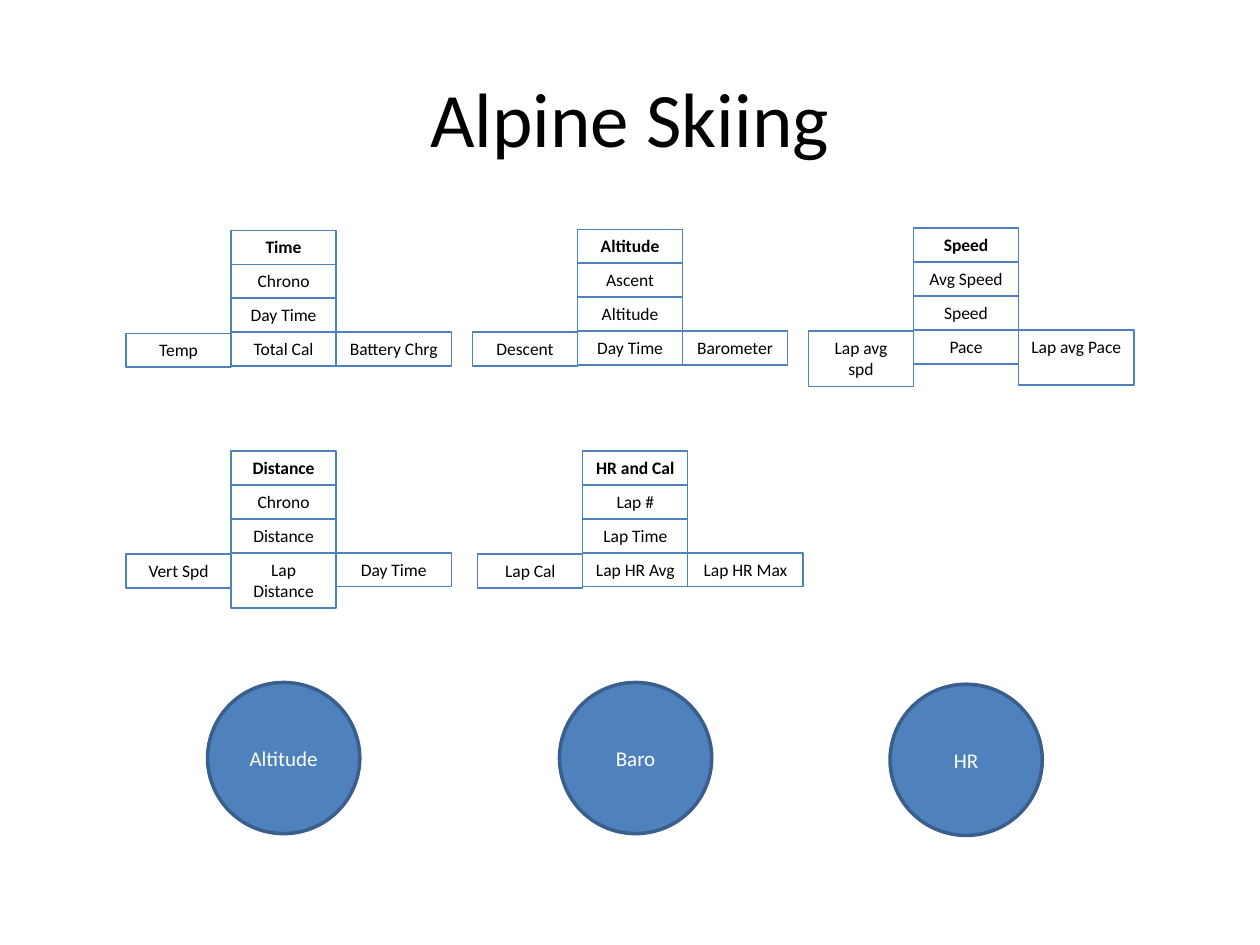
from dataclasses import dataclass

from pptx import Presentation
from pptx.dml.color import RGBColor
from pptx.enum.shapes import MSO_SHAPE as Shape
from pptx.enum.text import MSO_ANCHOR as Anchor, MSO_AUTO_SIZE as AutoSize, PP_ALIGN as Align
from pptx.util import Pt

TITLE = "Alpine Skiing"

# (left, top), centre column, left cell, right cell, right width, tall cells
DISPLAYS = [
    ((333, 257.8), ["HR and Cal", "Lap #", "Lap Time", "Lap HR Avg"], "Lap Cal", "Lap HR Max", 66, []),
    ((132, 131.6), ["Time", "Chrono", "Day Time", "Total Cal"], "Temp", "Battery Chrg", 66, []),
    ((522, 130.4), ["Speed", "Avg Speed", "Speed", "Pace"], "Lap avg spd", "Lap avg Pace", 66,
     ["Lap avg spd", "Lap avg Pace"]),
    ((132, 257.8), ["Distance", "Chrono", "Distance", "Lap Distance"], "Vert Spd", "Day Time", 66,
     ["Lap Distance"]),
    ((330, 131), ["Altitude", "Ascent", "Altitude", "Day Time"], "Descent", "Barometer", 60, []),
]
DIALS = [("Altitude", 118.6, 390), ("Baro", 319.7, 390), ("HR", 508.6, 391)]

CELL_WIDTH, CELL_HEIGHT, TALL_HEIGHT = 60, 19.4, 31.5
LEFT_CELL_DROP = 0.6
DIAL_WIDTH, DIAL_HEIGHT = 87, 86.4


@dataclass(frozen=True)
class Theme:
    font: str = "Calibri"
    ink: str = "000000"
    paper: str = "FFFFFF"
    blue: str = "4F81BD"
    dark_blue: str = "3A5F8C"
    title_size: float = 44
    cell_size: float = 10
    dial_size: float = 12
    cell_line: float = 0.75
    dial_line: float = 2


THEME = Theme()


def write_text(shape, text, size, color=THEME.ink, bold=False, anchor=Anchor.MIDDLE, fit=AutoSize.NONE):
    frame = shape.text_frame
    frame.word_wrap = True
    frame.auto_size = fit
    frame.vertical_anchor = anchor
    paragraph = frame.paragraphs[0]
    paragraph.alignment = Align.CENTER
    run = paragraph.add_run()
    run.text = text
    run.font.name = THEME.font
    run.font.size = Pt(size)
    run.font.bold = bold
    run.font.color.rgb = RGBColor.from_string(color)


def add_outline(shapes, kind, box, line_color, line_width, fill=None):
    shape = shapes.add_shape(kind, *map(Pt, box))
    shape.shadow.inherit = False
    if fill:
        shape.fill.solid()
        shape.fill.fore_color.rgb = RGBColor.from_string(fill)
    else:
        shape.fill.background()
    shape.line.color.rgb = RGBColor.from_string(line_color)
    shape.line.width = Pt(line_width)
    return shape


def add_display(slide, origin, column, left_text, right_text, right_width, tall):
    left, top = origin
    bottom_row = top + (len(column) - 1) * CELL_HEIGHT
    cells = [(text, left, top + row * CELL_HEIGHT, CELL_WIDTH) for row, text in enumerate(column)]
    cells.insert(-1, (left_text, left - CELL_WIDTH, bottom_row + LEFT_CELL_DROP, CELL_WIDTH))
    cells.append((right_text, left + CELL_WIDTH, bottom_row, right_width))
    group = slide.shapes.add_group_shape()
    for index, (text, x, y, width) in enumerate(cells):
        height = TALL_HEIGHT if text in tall else CELL_HEIGHT
        cell = add_outline(group.shapes, Shape.RECTANGLE, (x, y, width, height), THEME.blue, THEME.cell_line)
        write_text(cell, text, THEME.cell_size, bold=index == 0, anchor=Anchor.TOP,
                   fit=AutoSize.SHAPE_TO_FIT_TEXT)


def add_dial(slide, text, left, top):
    dial = add_outline(slide.shapes, Shape.OVAL, (left, top, DIAL_WIDTH, DIAL_HEIGHT),
                       THEME.dark_blue, THEME.dial_line, fill=THEME.blue)
    write_text(dial, text, THEME.dial_size, color=THEME.paper)


def main():
    presentation = Presentation()
    presentation.slide_width, presentation.slide_height = Pt(720), Pt(540)
    slide = presentation.slides.add_slide(presentation.slide_layouts[5])
    title = slide.shapes.title
    title.left, title.top, title.width, title.height = map(Pt, (36, 21.6, 648, 90))
    write_text(title, TITLE, THEME.title_size)
    for display in DISPLAYS:
        add_display(slide, *display)
    for dial in DIALS:
        add_dial(slide, *dial)
    presentation.save("out.pptx")


if __name__ == "__main__":
    main()
